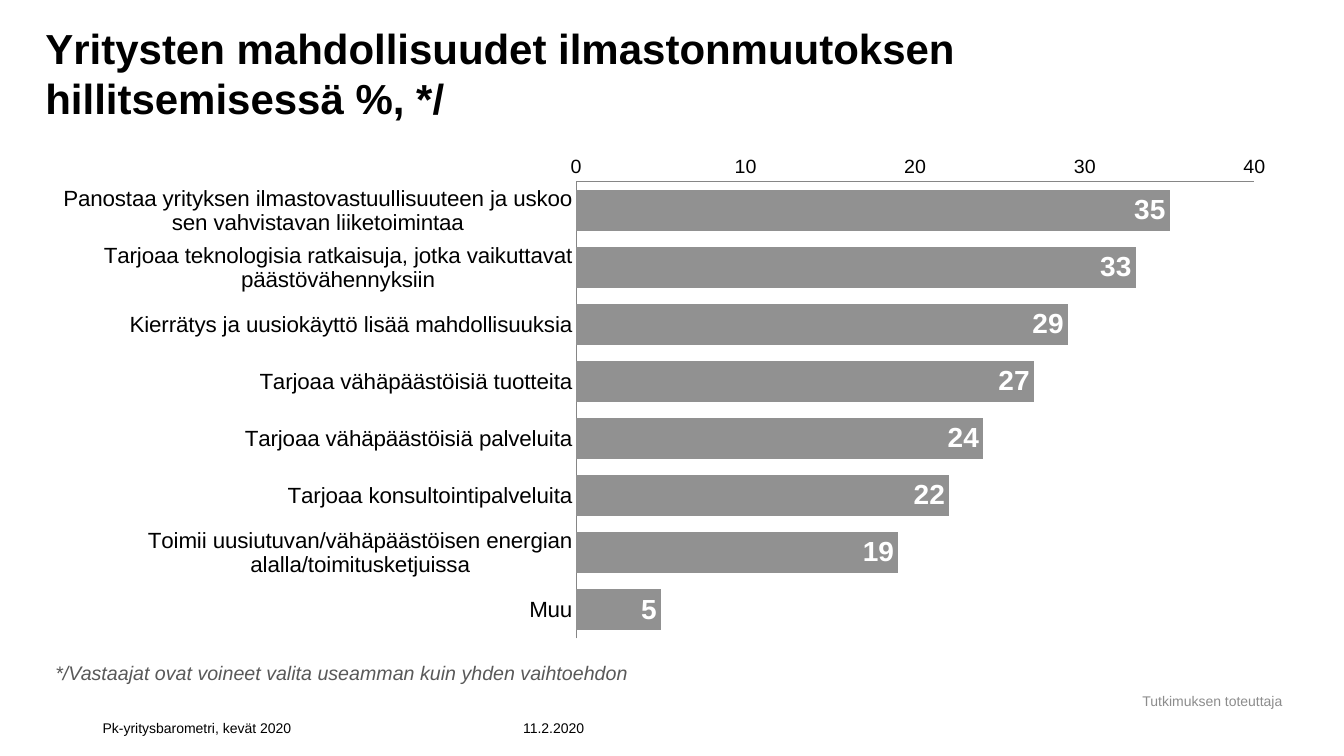
from dataclasses import dataclass

from lxml import etree
from pptx import Presentation
from pptx.chart.data import CategoryChartData
from pptx.dml.color import RGBColor
from pptx.enum.chart import XL_AXIS_CROSSES, XL_CHART_TYPE, XL_LABEL_POSITION, XL_TICK_MARK
from pptx.enum.text import MSO_ANCHOR, MSO_AUTO_SIZE, PP_ALIGN
from pptx.oxml.ns import qn
from pptx.util import Inches, Pt


@dataclass(frozen=True)
class Theme:
    """Colours, font and type sizes of the slide."""
    font: str = "Arial"
    text: RGBColor = RGBColor(0x00, 0x00, 0x00)
    note: RGBColor = RGBColor(0x59, 0x59, 0x59)
    credit: RGBColor = RGBColor(0x8C, 0x8C, 0x8C)
    bar: RGBColor = RGBColor(0x91, 0x91, 0x91)
    axis: RGBColor = RGBColor(0x86, 0x86, 0x86)
    paper: RGBColor = RGBColor(0xFF, 0xFF, 0xFF)
    title_size: int = 30
    value_size: int = 20
    category_size: int = 16
    note_size: int = 14
    footer_size: int = 10


THEME = Theme()

ANSWERS = {
    "Panostaa yrityksen ilmastovastuullisuuteen ja uskoo sen vahvistavan liiketoimintaa": 35,
    "Tarjoaa teknologisia ratkaisuja, jotka vaikuttavat päästövähennyksiin": 33,
    "Kierrätys ja uusiokäyttö lisää mahdollisuuksia": 29,
    "Tarjoaa vähäpäästöisiä tuotteita": 27,
    "Tarjoaa vähäpäästöisiä palveluita": 24,
    "Tarjoaa konsultointipalveluita": 22,
    "Toimii uusiutuvan/vähäpäästöisen energian alalla/toimitusketjuissa": 19,
    "Muu": 5,
}


def style_font(font, size, color, bold=False, italic=False):
    """Apply the theme font with a size, colour and style."""
    font.name = THEME.font
    font.size = Pt(size)
    font.color.rgb = color
    font.bold = bold
    font.italic = italic


def add_title(slide, left, top, width, height):
    """Place the two-line headline at the bottom of its box."""
    title = slide.shapes.title
    title.left, title.top, title.width, title.height = map(Inches, (left, top, width, height))
    frame = title.text_frame
    frame.auto_size = MSO_AUTO_SIZE.NONE
    frame.vertical_anchor = MSO_ANCHOR.BOTTOM
    frame.margin_left = frame.margin_right = frame.margin_top = frame.margin_bottom = 0
    frame.text = "Yritysten mahdollisuudet ilmastonmuutoksen\vhillitsemisessä %, */"
    paragraph = frame.paragraphs[0]
    paragraph.alignment = PP_ALIGN.LEFT
    style_font(paragraph.font, THEME.title_size, THEME.text, bold=True)


def add_text(slide, box, text, size, color, anchor, align=PP_ALIGN.LEFT, italic=False, wrap=True):
    """Place a one-paragraph text box."""
    frame = slide.shapes.add_textbox(*map(Inches, box)).text_frame
    frame.word_wrap = wrap
    frame.vertical_anchor = anchor
    frame.text = text
    paragraph = frame.paragraphs[0]
    paragraph.alignment = align
    style_font(paragraph.font, size, color, italic=italic)


def set_plot_layout(chart, x, y, w, h):
    """Fix the inner plot area as fractions of the chart."""
    plot_area = chart._chartSpace.chart.plotArea
    for old in plot_area.findall(qn("c:layout")):
        plot_area.remove(old)
    layout = etree.Element(qn("c:layout"))
    plot_area.insert(0, layout)
    manual = etree.SubElement(layout, qn("c:manualLayout"))
    settings = {"layoutTarget": "inner", "xMode": "edge", "yMode": "edge", "x": x, "y": y, "w": w, "h": h}
    for name, value in settings.items():
        etree.SubElement(manual, qn(f"c:{name}")).set("val", str(value))


def style_axis(axis, size):
    """Give an axis a thin line, no ticks or gridlines, and themed labels."""
    axis.has_major_gridlines = False
    axis.major_tick_mark = axis.minor_tick_mark = XL_TICK_MARK.NONE
    axis.format.line.color.rgb = THEME.axis
    axis.format.line.width = Pt(0.75)
    style_font(axis.tick_labels.font, size, THEME.text)


def add_answer_chart(slide, left, top, width, height):
    """Place the bar chart of answers, largest first."""
    data = CategoryChartData()
    data.categories = ANSWERS.keys()
    data.add_series("Series 1", ANSWERS.values())
    chart = slide.shapes.add_chart(
        XL_CHART_TYPE.BAR_CLUSTERED, *map(Inches, (left, top, width, height)), data
    ).chart
    chart.has_legend = False
    chart.has_title = False
    style_font(chart.font, THEME.footer_size, THEME.text)
    set_plot_layout(chart, 0.428, 0.033, 0.547, 0.9)

    categories, values = chart.category_axis, chart.value_axis
    style_axis(categories, THEME.category_size)
    style_axis(values, THEME.note_size)
    categories.reverse_order = True
    categories.crosses = XL_AXIS_CROSSES.MAXIMUM
    values.minimum_scale, values.maximum_scale, values.major_unit = 0, 40, 10

    plot = chart.plots[0]
    plot.gap_width = 40
    plot.vary_by_categories = False
    series = plot.series[0]
    series.format.fill.solid()
    series.format.fill.fore_color.rgb = THEME.bar
    labels = series.data_labels
    labels.show_value = True
    labels.position = XL_LABEL_POSITION.INSIDE_END
    style_font(labels.font, THEME.value_size, THEME.paper, bold=True)


def add_footer(slide, left, top, height):
    """Place the survey name and the date side by side."""
    name_width = 4.17
    for x, width, text in (
        (left, name_width, "Pk-yritysbarometri, kevät 2020"),
        (left + name_width, 0.87, "11.2.2020"),
    ):
        add_text(slide, (x, top, width, height), text, THEME.footer_size, THEME.text, MSO_ANCHOR.BOTTOM)


def main():
    """Build and save the slide."""
    presentation = Presentation()
    presentation.slide_width = Inches(13.33)
    presentation.slide_height = Inches(7.5)
    slide = presentation.slides.add_slide(presentation.slide_layouts[5])
    margin, content_width = 0.45, 12.3

    add_title(slide, margin, 0, content_width, 1.22)
    add_answer_chart(slide, margin, 1.55, content_width, 5.12)
    add_text(slide, (margin, 6.51, 5.91, 0.64),
             "*/Vastaajat ovat voineet valita useamman kuin yhden vaihtoehdon",
             THEME.note_size, THEME.note, MSO_ANCHOR.TOP, italic=True, wrap=False)
    add_text(slide, (11.16, 6.82, 1.73, 0.26), "Tutkimuksen toteuttaja",
             THEME.footer_size, THEME.credit, MSO_ANCHOR.MIDDLE, align=PP_ALIGN.CENTER)
    add_footer(slide, 0.92, 7, 0.35)
    presentation.save("out.pptx")


if __name__ == "__main__":
    main()
